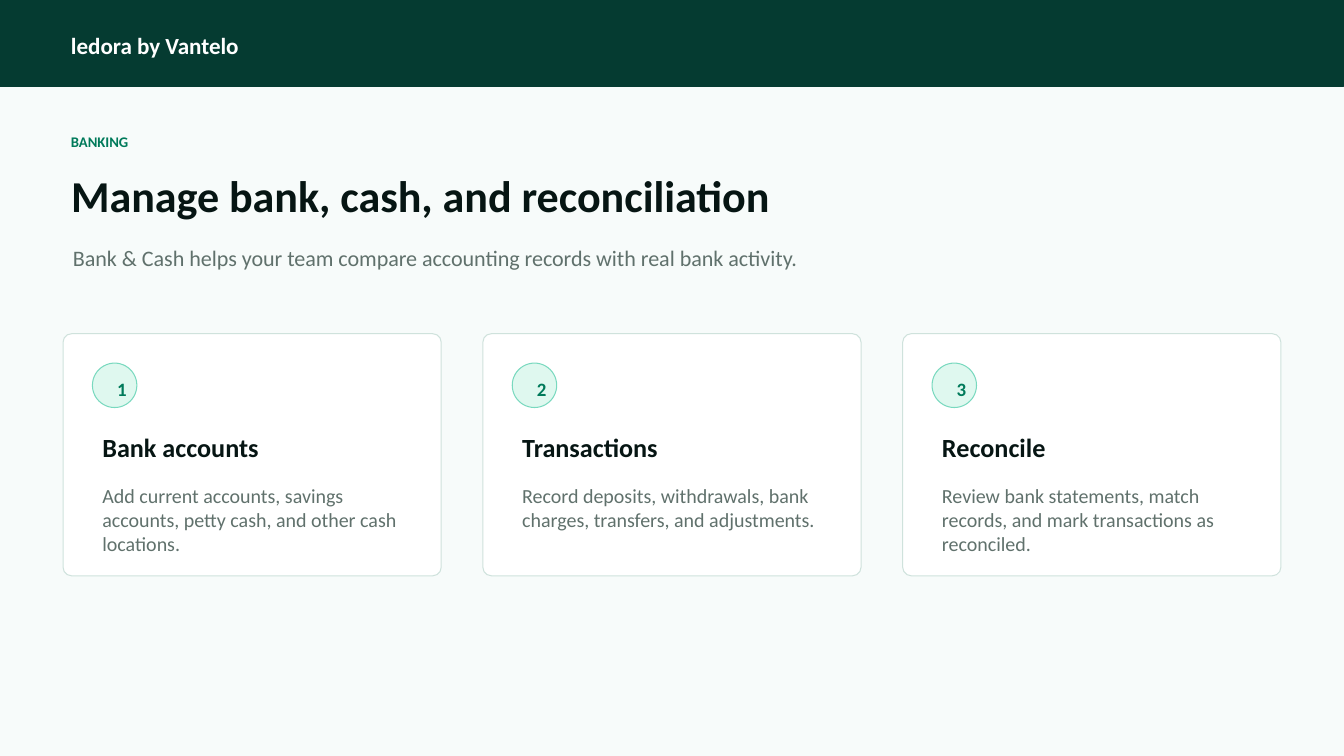
"""Build the banking overview slide with three numbered step cards."""
from pptx import Presentation
from pptx.dml.color import RGBColor
from pptx.enum import shapes, text
from pptx.util import Cm, Pt

FOREST = RGBColor(0x05, 0x3B, 0x31)
GREEN = RGBColor(0x00, 0x7A, 0x5A)
INK = RGBColor(0x06, 0x15, 0x13)
GREY = RGBColor(0x60, 0x71, 0x6C)
WHITE = RGBColor(0xFF, 0xFF, 0xFF)
MIST = RGBColor(0xF7, 0xFB, 0xFA)
CARD_EDGE = RGBColor(0xCF, 0xE2, 0xDC)
MINT = RGBColor(0xDF, 0xF8, 0xEF)
MINT_EDGE = RGBColor(0x79, 0xD9, 0xBF)

deck = Presentation()
deck.slide_width, deck.slide_height = Cm(33.87), Cm(19.05)
page = deck.slides.add_slide(deck.slide_layouts[5])
page.background.fill.solid()
page.background.fill.fore_color.rgb = MIST


def add_panel(kind, left, top, width, height, fill, edge):
    panel = page.shapes.add_shape(kind, Cm(left), Cm(top), Cm(width), Cm(height))
    panel.shadow.inherit = False
    panel.fill.solid()
    panel.fill.fore_color.rgb = fill
    panel.line.color.rgb = edge
    panel.line.width = Pt(0.75)
    return panel


def add_words(words, left, top, width, height, size, color, bold=True, box=None):
    box = box or page.shapes.add_textbox(0, 0, 0, 0)
    box.left, box.top, box.width, box.height = Cm(left), Cm(top), Cm(width), Cm(height)
    frame = box.text_frame
    frame.text = words
    frame.word_wrap = True
    frame.auto_size = text.MSO_AUTO_SIZE.NONE
    frame.vertical_anchor = text.MSO_ANCHOR.TOP
    para = frame.paragraphs[0]
    para.alignment = text.PP_ALIGN.LEFT
    span = para.runs[0]
    span.font.color.rgb = color
    for name, value in {"name": "Calibri", "size": Pt(size), "bold": bold}.items():
        setattr(span.font, name, value)


add_panel(shapes.MSO_SHAPE.RECTANGLE, 0, 0, 33.87, 2.17, FOREST, FOREST)
add_words("ledora by Vantelo", 1.54, 0.66, 7.42, 0.9, 16.5, WHITE)
add_words("BANKING", 1.54, 3.23, 11.38, 0.74, 10.5, GREEN)
add_words("Manage bank, cash, and reconciliation", 1.54, 4.12, 23.83, 1.75, 31.5, INK,
          box=page.shapes.title)
add_words("Bank & Cash helps your team compare accounting records with real bank activity.",
          1.59, 6.03, 25.4, 1.27, 15.75, GREY, bold=False)

cards = [
    ("Bank accounts",
     "Add current accounts, savings accounts, petty cash, and other cash locations."),
    ("Transactions",
     "Record deposits, withdrawals, bank charges, transfers, and adjustments."),
    ("Reconcile",
     "Review bank statements, match records, and mark transactions as reconciled."),
]
for index, (heading, detail) in enumerate(cards):
    left = 1.59 + index * 10.58
    inner = left + 0.74
    card = add_panel(shapes.MSO_SHAPE.ROUNDED_RECTANGLE, left, 8.41, 9.53, 6.1, WHITE, CARD_EDGE)
    card.adjustments[0] = 0.035
    add_panel(shapes.MSO_SHAPE.OVAL, inner, 9.15, 1.12, 1.12, MINT, MINT_EDGE)
    add_words(str(index + 1), inner + 0.37, 9.39, 0.53, 0.64, 13.5, GREEN)
    add_words(heading, inner, 10.74, 8.05, 1.12, 18.75, INK)
    add_words(detail, inner, 12.06, 8.05, 1.85, 14.25, GREY, bold=False)

deck.save("out.pptx")
